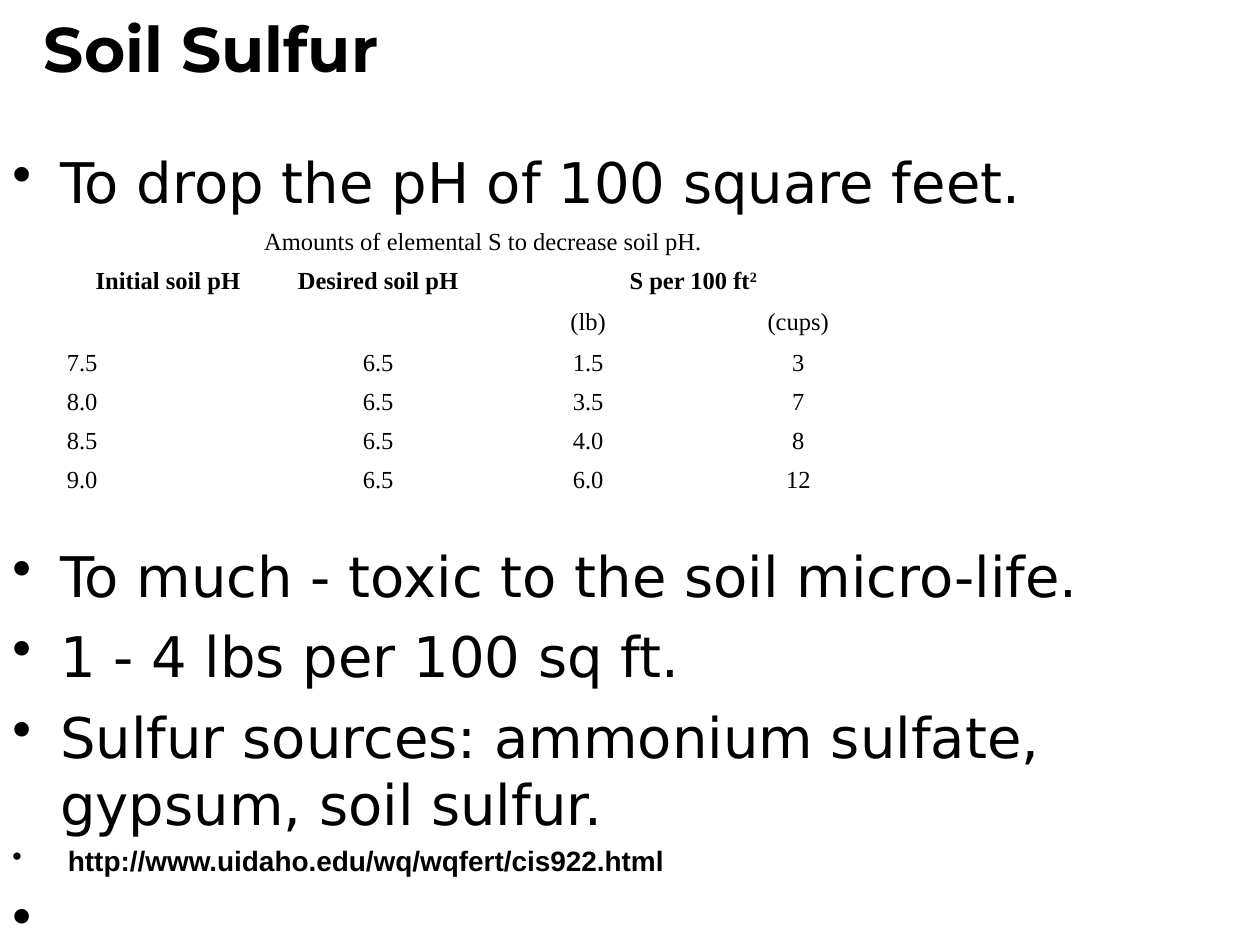
import pptx
import pptx.util
import pptx.dml.color
import pptx.enum.text
import lxml.etree

Pt = pptx.util.Pt
Inches = pptx.util.Inches
ALIGN = pptx.enum.text.PP_ALIGN
MIDDLE = pptx.enum.text.MSO_ANCHOR.MIDDLE

THEME = {
    "ink": pptx.dml.color.RGBColor(0, 0, 0),
    "title": {"font": "Montserrat", "size": 36, "bold": True},
    "bullet": {"font": "DejaVu Sans", "size": 32},
    "link": {"font": "Arial", "size": 16, "bold": True},
    "cell": {"font": "Times New Roman", "size": 14},
}

deck = pptx.Presentation()
deck.slide_width, deck.slide_height = Inches(10), Inches(7.5)
slide = deck.slides.add_slide(deck.slide_layouts[6])
W, H = deck.slide_width, deck.slide_height


def write(paragraph, text, font, size, bold=False, align=ALIGN.LEFT,
          before=0, spacing=None, bullet=False, raised=""):
    """Fill a paragraph; `raised` is a superscript after the text."""
    if bullet:
        props = paragraph._p.get_or_add_pPr()
        props.set("marL", str(Inches(0.38)))
        props.set("indent", str(-Inches(0.38)))
        mark = lxml.etree.SubElement(props, pptx.oxml.ns.qn("a:buChar"))
        mark.set("char", "•")
    paragraph.alignment = align
    paragraph.space_before = Pt(before)
    if spacing:
        paragraph.line_spacing = spacing
    for part in [text, raised] if raised else [text]:
        run = paragraph.add_run()
        run.text = part
        run.font.name, run.font.size, run.font.bold = font, Pt(size), bold
        run.font.color.rgb = THEME["ink"]
        if raised and part == raised:
            run.font._element.set("baseline", "30000")


# Title
title = slide.shapes.add_textbox(W * 0.025, 0, W * 0.858, H * 0.1).text_frame
title.word_wrap = True
title.vertical_anchor = MIDDLE
write(title.paragraphs[0], "Soil Sulfur", **THEME["title"])

# Bullets, with room for the table left above the second one
body = slide.shapes.add_textbox(0, H * 0.15, W, H * 0.85).text_frame
body.word_wrap = True
bullets = [
    ("To drop the pH of 100 square feet.", "bullet", 0),
    ("To much - toxic to the soil micro-life.", "bullet", 186.5),
    ("1 - 4 lbs per 100 sq ft.", "bullet", 7.5),
    ("Sulfur sources: ammonium sulfate, gypsum, soil sulfur.", "bullet", 7.5),
    (" http://www.uidaho.edu/wq/wqfert/cis922.html", "link", 3.7),
    (" ", "bullet", 7.5),
]
for number, (text, style, before) in enumerate(bullets):
    paragraph = body.add_paragraph() if number else body.paragraphs[0]
    write(paragraph, text, before=before, bullet=True, **THEME[style])

# Sulfur amounts
amounts = [
    ["Amounts of elemental S to decrease soil pH.", "", "", ""],
    ["Initial soil pH", "Desired soil pH", "S per 100 ft", ""],
    ["", "", "(lb)", "(cups)"],
    ["7.5", "6.5", "1.5", "3"],
    ["8.0", "6.5", "3.5", "7"],
    ["8.5", "6.5", "4.0", "8"],
    ["9.0", "6.5", "6.0", "12"],
]
HEADER_ROW, FIRST_DATA_ROW = 1, 3
table = slide.shapes.add_table(len(amounts), 4, Inches(0.5), Inches(1.75),
                               Inches(6.67), Inches(0.31 * len(amounts))).table
table.first_row = table.horz_banding = False
for r, row in enumerate(amounts):
    for c, text in enumerate(row):
        cell = table.cell(r, c)
        cell.fill.background()
        cell.vertical_anchor = MIDDLE
        cell.margin_left = cell.margin_right = Inches(0.03)
        cell.margin_top = cell.margin_bottom = Inches(0.02)
        starts_data = c == 0 and r >= FIRST_DATA_ROW
        write(cell.text_frame.paragraphs[0], text, bold=r == HEADER_ROW,
              align=ALIGN.LEFT if starts_data else ALIGN.CENTER, spacing=1.15,
              raised="2" if text.endswith("ft") else "", **THEME["cell"])
table.cell(0, 0).merge(table.cell(0, 3))
table.cell(HEADER_ROW, 2).merge(table.cell(HEADER_ROW, 3))

deck.save("out.pptx")
